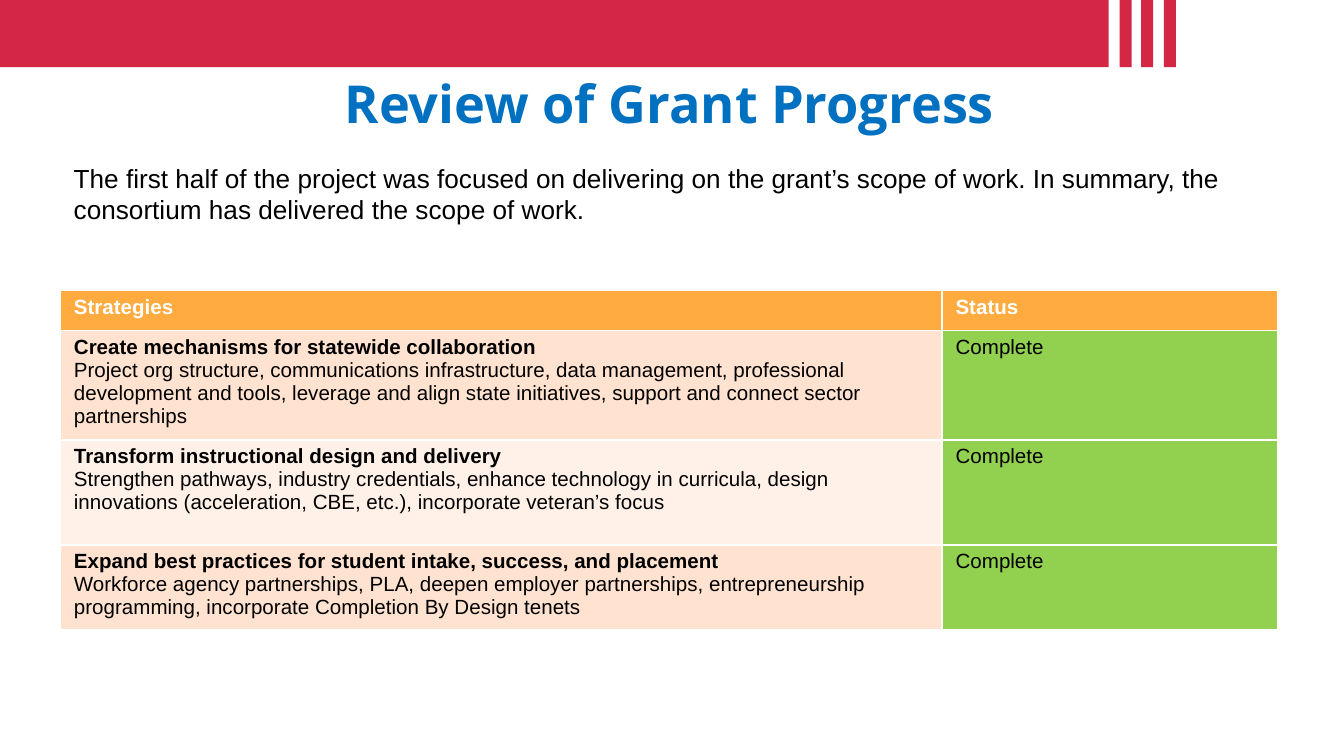
from dataclasses import dataclass
from typing import NamedTuple

from lxml.etree import SubElement
from pptx import Presentation
from pptx.dml.color import RGBColor
from pptx.enum.shapes import MSO_SHAPE
from pptx.enum.text import MSO_ANCHOR, PP_ALIGN
from pptx.oxml.ns import qn
from pptx.util import Inches, Pt


@dataclass(frozen=True)
class Theme:
    red: str = "CF0A2C"
    blue: str = "0070C0"
    orange: str = "FFAB40"
    peach: str = "FFE2CF"
    pale_peach: str = "FFF1E8"
    green: str = "92D050"
    white: str = "FFFFFF"
    black: str = "000000"
    title_font: str = "Open Sans"
    body_font: str = "Arial"
    title_size: int = 28
    body_size: int = 14
    table_size: int = 11


class Strategy(NamedTuple):
    name: str
    detail: str
    status: str
    height: float


class Bar(NamedTuple):
    left: float
    width: float


THEME = Theme()
BARS = [Bar(-0.01, 8.26), Bar(8.33, 0.09), Bar(8.49, 0.09), Bar(8.66, 0.09)]
BAR_HEIGHT = 0.5
BAR_OPACITY = 88
COLUMN_WIDTHS = [6.56, 2.5]
HEADER_HEIGHT = 0.3
STRATEGIES = [
    Strategy(
        "Create mechanisms for statewide collaboration",
        "Project org structure, communications infrastructure, data management, "
        "professional development and tools, leverage and align state initiatives, "
        "support and connect sector partnerships",
        "Complete", 0.78),
    Strategy(
        "Transform instructional design and delivery",
        "Strengthen pathways, industry credentials, enhance technology in curricula, "
        "design innovations (acceleration, CBE, etc.), incorporate veteran’s focus",
        "Complete", 0.78),
    Strategy(
        "Expand best practices for student intake, success, and placement",
        "Workforce agency partnerships, PLA, deepen employer partnerships, "
        "entrepreneurship programming, incorporate Completion By Design tenets",
        "Complete", 0.6),
]


def style_paragraph(para, font: str, size: int, color: str, bold: bool = False) -> None:
    for span in para.runs:
        span.font.name = font
        span.font.size = Pt(size)
        span.font.bold = bold
        span.font.color.rgb = RGBColor.from_string(color)


def add_bar(page, bar: Bar) -> None:
    shape = page.shapes.add_shape(
        MSO_SHAPE.RECTANGLE, Inches(bar.left), 0, Inches(bar.width), Inches(BAR_HEIGHT))
    shape.shadow.inherit = False
    shape.line.fill.background()
    shape.fill.solid()
    shape.fill.fore_color.rgb = RGBColor.from_string(THEME.red)
    color = shape.fill._xPr.find(".//" + qn("a:srgbClr"))
    SubElement(color, qn("a:alpha"), val=str(BAR_OPACITY * 1000))


def add_text(page, left: float, top: float, width: float, height: float, text: str):
    """Add a wrapped, top-anchored box and return it with its paragraph."""
    box = page.shapes.add_textbox(Inches(left), Inches(top), Inches(width), Inches(height))
    frame = box.text_frame
    frame.word_wrap = True
    frame.vertical_anchor = MSO_ANCHOR.TOP
    frame.text = text
    return box, frame.paragraphs[0]


def add_title(page) -> None:
    box, para = add_text(page, 0.36, 0.43, 9.24, 0.44, "Review of Grant Progress")
    frame = box.text_frame
    frame.margin_left = frame.margin_right = Inches(0.1)
    frame.margin_top = frame.margin_bottom = Inches(0.1)
    para.alignment = PP_ALIGN.CENTER
    style_paragraph(para, THEME.title_font, THEME.title_size, THEME.blue, bold=True)


def add_summary(page) -> None:
    _, para = add_text(
        page, 0.45, 1.16, 9.01, 0.57,
        "The first half of the project was focused on delivering on the grant’s scope "
        "of work. In summary, the consortium has delivered the scope of work.")
    style_paragraph(para, THEME.body_font, THEME.body_size, THEME.black)


def fill_cell(cell, lines: list[str], fill: str, color: str, bold_first: bool) -> None:
    cell.margin_left = cell.margin_right = Inches(0.1)
    cell.margin_top = cell.margin_bottom = Inches(0.04)
    cell.fill.solid()
    cell.fill.fore_color.rgb = RGBColor.from_string(fill)
    cell.text_frame.text = "\n".join(lines)
    for index, para in enumerate(cell.text_frame.paragraphs):
        style_paragraph(para, THEME.body_font, THEME.table_size, color,
                        bold=bold_first and index == 0)


def add_strategy_table(page) -> None:
    """Add the table; its default style draws the white borders."""
    heights = [HEADER_HEIGHT] + [strategy.height for strategy in STRATEGIES]
    table = page.shapes.add_table(
        len(heights), len(COLUMN_WIDTHS), Inches(0.45), Inches(2.16),
        Inches(sum(COLUMN_WIDTHS)), Inches(sum(heights))).table
    for column, width in zip(table.columns, COLUMN_WIDTHS):
        column.width = Inches(width)
    for row, height in zip(table.rows, heights):
        row.height = Inches(height)

    for column, heading in enumerate(["Strategies", "Status"]):
        fill_cell(table.cell(0, column), [heading], THEME.orange, THEME.white, True)
    for row, strategy in enumerate(STRATEGIES, start=1):
        band = THEME.peach if row % 2 else THEME.pale_peach
        fill_cell(table.cell(row, 0), [strategy.name, strategy.detail], band, THEME.black, True)
        fill_cell(table.cell(row, 1), [strategy.status], THEME.green, THEME.black, False)


def main() -> None:
    deck = Presentation()
    deck.slide_width = Inches(10)
    deck.slide_height = Inches(10 * 9 / 16)
    page = deck.slides.add_slide(deck.slide_layouts[6])
    for bar in BARS:
        add_bar(page, bar)
    add_title(page)
    add_strategy_table(page)
    add_summary(page)
    deck.save("out.pptx")


if __name__ == "__main__":
    main()
